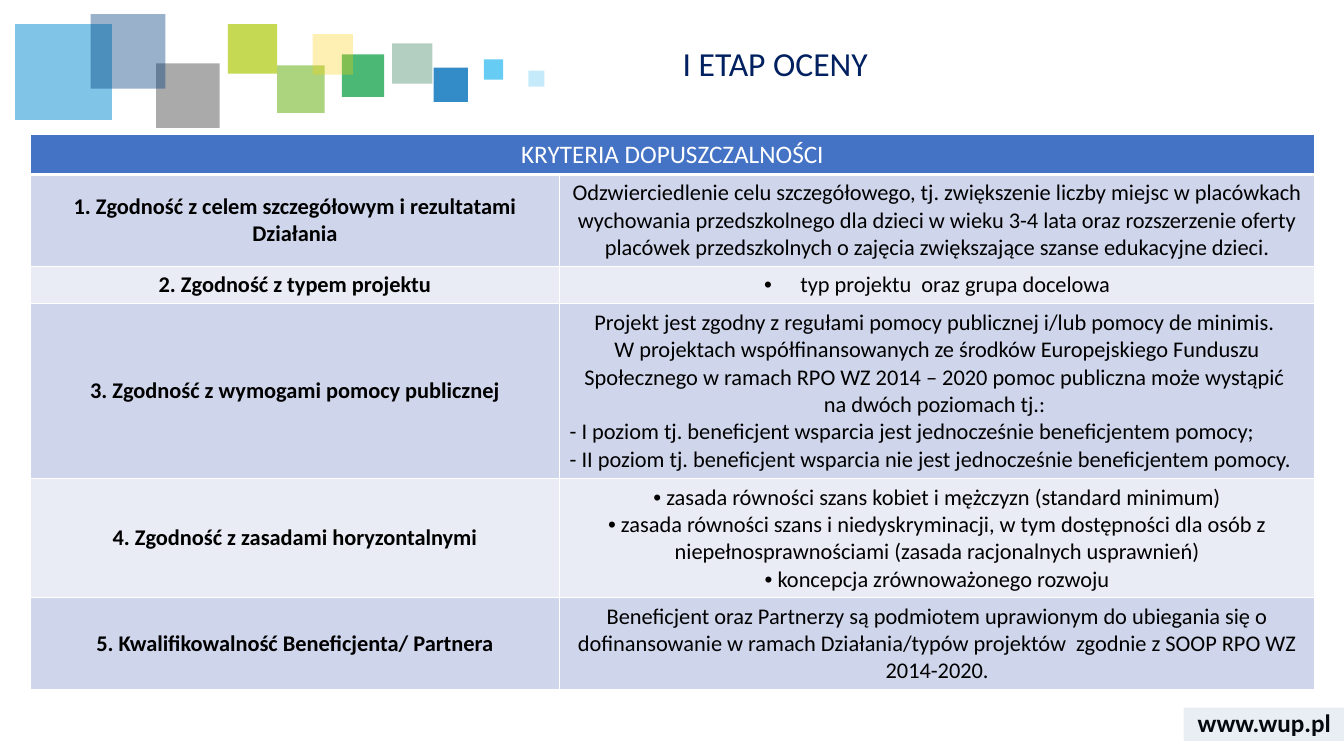
import pptx
import pptx.util
import pptx.dml.color
import pptx.enum.shapes
import pptx.enum.text
import pptx.oxml
import pptx.oxml.ns

Inches = pptx.util.Inches
Pt = pptx.util.Pt
RGB = pptx.dml.color.RGBColor
ALIGN = pptx.enum.text.PP_ALIGN
ANCHOR = pptx.enum.text.MSO_ANCHOR
qn = pptx.oxml.ns.qn

FONT = "Calibri"
WHITE = RGB(0xFF, 0xFF, 0xFF)
BLACK = RGB(0x00, 0x00, 0x00)
NAVY = RGB(0x00, 0x20, 0x60)
HEAD = RGB(0x44, 0x72, 0xC4)
BANDS = RGB(0xCF, 0xD5, 0xEA), RGB(0xE9, 0xEB, 0xF5)
FOOT = RGB(0x2F, 0x55, 0x97)
SKY = RGB(0x40, 0xC0, 0xF1)

# Left, top, width, height, colour, opacity in percent
TILES = [
    (3.89, 0.43, 0.4, 0.4, RGB(0x00, 0x61, 0x38), 30),
    (4.3, 0.67, 0.34, 0.34, RGB(0x00, 0x6E, 0xB9), 80),
    (3.39, 0.54, 0.42, 0.42, RGB(0x00, 0x9A, 0x3C), 70),
    (0.15, 0.24, 0.96, 0.95, RGB(0x02, 0x8B, 0xD3), 50),
    (2.75, 0.65, 0.47, 0.47, RGB(0x75, 0xB8, 0x2A), 60),
    (1.55, 0.63, 0.63, 0.64, RGB(0x57, 0x57, 0x57), 50),
    (0.9, 0.14, 0.74, 0.74, RGB(0x00, 0x3D, 0x7C), 40),
    (4.8, 0.59, 0.19, 0.2, SKY, 80),
    (2.26, 0.24, 0.49, 0.49, RGB(0xAF, 0xCA, 0x0B), 70),
    (3.1, 0.34, 0.4, 0.4, RGB(0xFE, 0xD0, 0x00), 30),
    (5.24, 0.7, 0.16, 0.16, SKY, 30),
]

COLS = 5.25, 7.49
ROWS = 0.4, 0.91, 0.37, 1.74, 1.18, 0.91

# Criterion, then its paragraphs: (text, alignment, bullet indent or None)
MID, LEFT = ALIGN.CENTER, ALIGN.LEFT
CRITERIA = [
    ("1. Zgodność z celem szczegółowym i rezultatami Działania", [
        ("Odzwierciedlenie celu szczegółowego, tj. zwiększenie liczby miejsc w placówkach "
         "wychowania przedszkolnego dla dzieci w wieku 3-4 lata oraz rozszerzenie oferty "
         "placówek przedszkolnych o zajęcia zwiększające szanse edukacyjne dzieci.",
         MID, None)]),
    ("2. Zgodność z typem projektu", [
        (" typ projektu  oraz grupa docelowa", MID, 0.31)]),
    ("3. Zgodność z wymogami pomocy publicznej", [
        ("Projekt jest zgodny z regułami pomocy publicznej i/lub pomocy de minimis. \n"
         "W projektach współfinansowanych ze środków Europejskiego Funduszu Społecznego "
         "w ramach RPO WZ 2014 – 2020 pomoc publiczna może wystąpić \n"
         "na dwóch poziomach tj.: ", MID, None),
        ("- I poziom tj. beneficjent wsparcia jest jednocześnie beneficjentem pomocy;",
         LEFT, None),
        ("- II poziom tj. beneficjent wsparcia nie jest jednocześnie beneficjentem pomocy.",
         LEFT, None)]),
    ("4. Zgodność z zasadami horyzontalnymi", [
        (" zasada równości szans kobiet i mężczyzn (standard minimum)", MID, 0),
        (" zasada równości szans i niedyskryminacji, w tym dostępności dla osób "
         "z niepełnosprawnościami (zasada racjonalnych usprawnień)", MID, 0),
        (" koncepcja zrównoważonego rozwoju", MID, 0)]),
    ("5. Kwalifikowalność Beneficjenta/ Partnera", [
        ("Beneficjent oraz Partnerzy są podmiotem uprawionym do ubiegania się "
         "o dofinansowanie w ramach Działania/typów projektów  zgodnie z SOOP "
         "RPO WZ 2014-2020.", MID, None)]),
]


def child(node, tag, **attrs):
    item = pptx.oxml.ns.qn(tag)
    item = node.makeelement(item, {key: str(val) for key, val in attrs.items()})
    node.append(item)
    return item


def style(para, size, color, bold=False, align=MID):
    para.alignment = align
    font = para.font
    font.name, font.size, font.bold = FONT, Pt(size), bold
    font.color.rgb = color


def add_tile(slide, left, top, width, height, color, alpha):
    tile = slide.shapes.add_shape(pptx.enum.shapes.MSO_SHAPE.RECTANGLE,
                                  Inches(left), Inches(top), Inches(width), Inches(height))
    tile.shadow.inherit = False
    tile.line.fill.background()
    tile.fill.solid()
    tile.fill.fore_color.rgb = color
    tint = tile.fill._xPr.find(qn("a:solidFill"))[0]
    child(tint, "a:alpha", val=alpha * 1000)


def add_bullet(para, indent):
    props = para._p.get_or_add_pPr()
    props.set("marL", str(Inches(indent)))
    props.set("indent", str(-Inches(indent)))
    child(props, "a:buFont", typeface="Arial")
    child(props, "a:buChar", char="•")


def paint(cell, color, base=1):
    """Give a cell white borders and a fill; base is the bottom border in points."""
    props = cell._tc.get_or_add_tcPr()
    for side in "LRTB":
        width = Pt(base if side == "B" else 1)
        line = child(props, f"a:ln{side}", w=width)
        child(child(line, "a:solidFill"), "a:srgbClr", val=WHITE)
    cell.fill.solid()
    cell.fill.fore_color.rgb = color


def fill_cell(cell, paras, bold=False):
    cell.vertical_anchor = ANCHOR.MIDDLE
    frame = cell.text_frame
    for num, (text, align, indent) in enumerate(paras):
        para = frame.add_paragraph() if num else frame.paragraphs[0]
        para.text = text
        if indent is not None:
            add_bullet(para, indent)
        style(para, 16, BLACK, bold, align)


def add_grid(slide):
    table = slide.shapes.add_table(len(ROWS), len(COLS), Inches(0.3), Inches(1.33),
                                   Inches(sum(COLS)), Inches(sum(ROWS))).table
    for col, width in zip(table.columns, COLS):
        col.width = Inches(width)
    for row, height in zip(table.rows, ROWS):
        row.height = Inches(height)

    # Header across both columns
    head = table.cell(0, 0)
    head.merge(table.cell(0, 1))
    for cell in table.rows[0].cells:
        paint(cell, HEAD, 3)
    head.text = "KRYTERIA DOPUSZCZALNOŚCI"
    style(head.text_frame.paragraphs[0], 18, WHITE)

    # Criteria on alternating bands
    for num, (name, paras) in enumerate(CRITERIA):
        left, right = table.rows[num + 1].cells
        for cell in left, right:
            paint(cell, BANDS[num % 2])
        fill_cell(left, [(name, MID, None)], True)
        fill_cell(right, paras)


def set_title(slide):
    title = slide.shapes.title
    title.left, title.top = Inches(6.67), Inches(0.42)
    title.width, title.height = Inches(6.36), Inches(0.55)
    frame = title.text_frame
    frame.text = "I ETAP OCENY"
    frame.auto_size = pptx.enum.text.MSO_AUTO_SIZE.NONE
    frame.vertical_anchor = ANCHOR.TOP
    para = frame.paragraphs[0]
    para.line_spacing = 0.9
    style(para, 24, NAVY, align=LEFT)


def add_site(slide):
    box = slide.shapes.add_textbox(Inches(11.74), Inches(6.97), Inches(1.6), Inches(0.4))
    frame = box.text_frame
    frame.word_wrap = True
    frame.vertical_anchor = ANCHOR.MIDDLE
    frame.text = "www.wup.pl"
    style(frame.paragraphs[0], 18, BLACK, True)
    add_tile(slide, 11.74, 7.02, 1.6, 0.33, FOOT, 10)


def main():
    deck = pptx.Presentation()
    deck.slide_width, deck.slide_height = Inches(13.33), Inches(7.5)
    slide = deck.slides.add_slide(deck.slide_layouts[5])
    add_site(slide)
    for tile in TILES:
        add_tile(slide, *tile)
    add_grid(slide)
    set_title(slide)
    deck.save("out.pptx")


if __name__ == "__main__":
    main()
